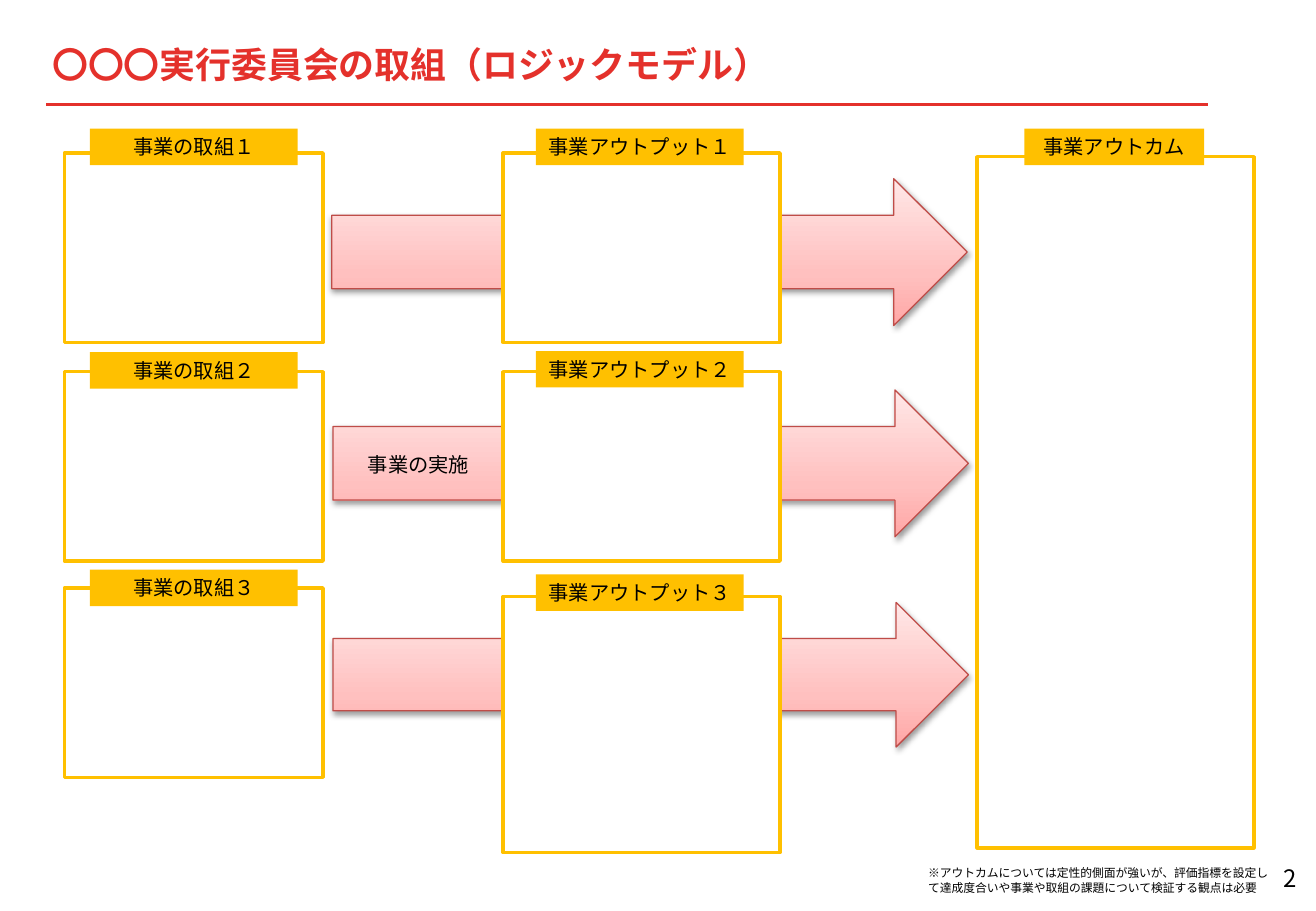
"""Build a one-slide logic model of project activities, outputs and outcomes."""
import lxml.etree
import pptx
import pptx.dml.color
import pptx.enum.shapes
import pptx.enum.text
import pptx.oxml
import pptx.oxml.ns
import pptx.util

RGBColor = pptx.dml.color.RGBColor
RED = RGBColor(0xE4, 0x31, 0x2B)
AMBER = RGBColor(0xFF, 0xC0, 0x00)
WHITE = RGBColor(0xFF, 0xFF, 0xFF)
BLACK = RGBColor(0x00, 0x00, 0x00)
ARROW_EDGE = RGBColor(0xBF, 0x4C, 0x48)
ARROW_STOPS = (
    (0, RGBColor(0xFF, 0xA6, 0xA5)),
    (35, RGBColor(0xFF, 0xC0, 0xBF)),
    (100, RGBColor(0xFF, 0xE7, 0xE7)),
)

Shape = pptx.enum.shapes.MSO_SHAPE
Align = pptx.enum.text.PP_ALIGN
Anchor = pptx.enum.text.MSO_ANCHOR
qn = pptx.oxml.ns.qn
NAMESPACE = pptx.oxml.ns.nsdecls("a")
JAPANESE = "Noto Sans CJK JP"
EMU_PER_PX = 9144


def px(*lengths):
    """Turn whole px, 100 to the inch, into EMU."""
    return [length * EMU_PER_PX for length in lengths]


class LogicModelSlide:
    """Hold the style and the slide, and draw each kind of element."""

    def __init__(self, deck):
        self.slide = deck.slides.add_slide(deck.slide_layouts[5])
        self.shapes = self.slide.shapes

    def set_text(self, box, text, size, font="Arial", color=BLACK, bold=False,
                 align=Align.LEFT, anchor=Anchor.MIDDLE, wrap=True, inset=True):
        """Fill a box with one formatted paragraph and return it."""
        frame = box.text_frame
        frame.text = text
        frame.auto_size = pptx.enum.text.MSO_AUTO_SIZE.NONE
        frame.word_wrap = wrap
        frame.vertical_anchor = anchor
        if not inset:
            frame.margin_left = frame.margin_right = 0
            frame.margin_top = frame.margin_bottom = 0
        para = frame.paragraphs[0]
        para.alignment = align
        span = para.runs[0]
        span.font.size = pptx.util.Pt(size)
        span.font.name = font
        span.font.bold = bold
        span.font.color.rgb = color
        east_asian = lxml.etree.Element(qn("a:ea"), typeface=JAPANESE)
        span.font._element.find(qn("a:latin")).addnext(east_asian)
        return para

    def title(self, text, *bounds):
        """Move and format the title placeholder."""
        box = self.shapes.title
        box.left, box.top, box.width, box.height = px(*bounds)
        self.set_text(box, text, 21.3, JAPANESE, RED, bold=True, inset=False)

    def rule(self, left, right, top):
        """Draw the red line under the title."""
        line = self.shapes.add_connector(
            pptx.enum.shapes.MSO_CONNECTOR.STRAIGHT, *px(left, top, right, top))
        line.line.color.rgb = RED
        line.line.width = pptx.util.Pt(2)
        lxml.etree.SubElement(line._element.spPr, qn("a:effectLst"))

    def text(self, text, size, *bounds, **style):
        """Add a text box and return its paragraph."""
        return self.set_text(self.shapes.add_textbox(*px(*bounds)), text, size, **style)

    def panel(self, *bounds):
        """Add a white rectangle with an amber outline."""
        box = self.shapes.add_shape(Shape.RECTANGLE, *px(*bounds))
        box.shadow.inherit = False
        box.fill.solid()
        box.fill.fore_color.rgb = WHITE
        box.line.color.rgb = AMBER
        box.line.width = pptx.util.Pt(2)

    def label(self, text, *bounds):
        """Add an amber heading."""
        box = self.shapes.add_shape(Shape.RECTANGLE, *px(*bounds))
        box.shadow.inherit = False
        box.fill.solid()
        box.fill.fore_color.rgb = AMBER
        box.line.fill.background()
        self.set_text(box, text, 12, align=Align.CENTER)

    def arrow(self, *bounds):
        """Add a pink gradient arrow with a soft shadow."""
        arrow = self.shapes.add_shape(Shape.RIGHT_ARROW, *px(*bounds))
        arrow.shadow.inherit = False
        arrow.line.color.rgb = ARROW_EDGE
        arrow.line.width = pptx.util.Pt(0.75)
        stops = "".join(
            f'<a:gs pos="{place * 1000}"><a:srgbClr val="{color}"/></a:gs>'
            for place, color in ARROW_STOPS)
        gradient = pptx.oxml.parse_xml(
            f'<a:gradFill {NAMESPACE} rotWithShape="1"><a:gsLst>{stops}</a:gsLst>'
            '<a:lin ang="16200000" scaled="0"/></a:gradFill>')
        properties = arrow._element.spPr
        properties.find(qn("a:prstGeom")).addnext(gradient)
        shadow = pptx.oxml.parse_xml(
            f'<a:outerShdw {NAMESPACE} blurRad="39370" dist="20320" dir="5400000" '
            f'rotWithShape="0"><a:srgbClr val="{BLACK}"><a:alpha val="38000"/>'
            '</a:srgbClr></a:outerShdw>')
        properties.find(qn("a:effectLst")).append(shadow)


def main():
    """Build and save the deck."""
    deck = pptx.Presentation()
    deck.slide_width, deck.slide_height = px(1083, 750)
    page = LogicModelSlide(deck)

    page.title("〇〇〇実行委員会の取組（ロジックモデル）", 43, 21, 939, 64)
    page.rule(38, 994, 86)
    page.text("2", 14.2, 1045, 714, 22, 21, font=JAPANESE, align=Align.RIGHT,
              anchor=Anchor.BOTTOM, wrap=False, inset=False)

    for left, top, height in ((273, 147, 121), (274, 321, 121), (274, 496, 119)):
        page.arrow(left, top, 523, height)

    activities = (("１", 126, 106), ("２", 306, 290), ("３", 484, 469))
    for number, top, label_top in activities:
        page.panel(53, top, 213, 156)
        page.label(f"事業の取組{number}", 74, label_top, 171, 30)

    outputs = (("１", 126, 156, 106), ("２", 306, 156, 289), ("３", 491, 211, 473))
    for number, top, height, label_top in outputs:
        page.panel(414, top, 228, height)
        page.label(f"事業アウトプット{number}", 441, label_top, 171, 30)

    page.panel(804, 129, 228, 569)
    page.label("事業アウトカム", 843, 106, 148, 30)

    page.text("事業の実施", 12, 293, 367, 181, 30)
    note = page.text(
        "※アウトカムについては定性的側面が強いが、評価指標を設定して達成度合いや"
        "事業や取組の課題について検証する観点は必要",
        7, 754, 708, 299, 34, anchor=Anchor.TOP)
    note.line_spacing = pptx.util.Pt(8.5)

    deck.save("out.pptx")


if __name__ == "__main__":
    main()
